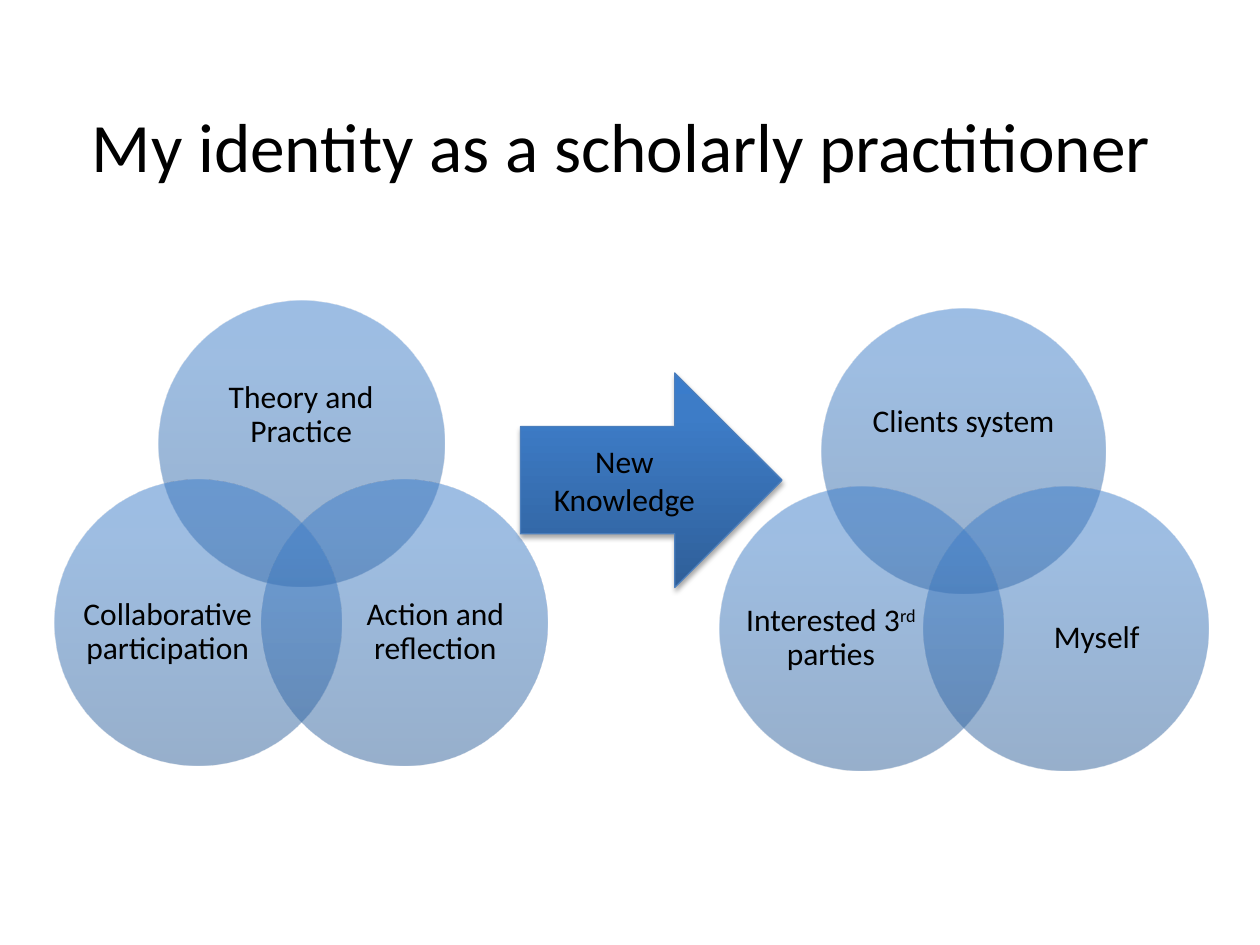
from copy import deepcopy

from pptx import Presentation
from pptx import util as u
from pptx.dml import color
from pptx.enum import shapes, text
from pptx.oxml import ns, xmlchemy

Pt = u.Pt
BLACK = color.RGBColor(0, 0, 0)
DEEP = color.RGBColor(0x2F, 0x5F, 0x99)
MID = color.RGBColor(0x3D, 0x7C, 0xC7)
LIGHT = color.RGBColor(0x3A, 0x7C, 0xCB)
EDGE = color.RGBColor(0x4B, 0x7E, 0xBC)
STOPS = ((0, DEEP), (0.8, MID), (1, LIGHT))
RINGS = (
    ((0.36, 0), (0.133, 0.175, 0.733, 0.45)),
    ((0.72, 0.625), (0.308, 0.26, 0.6, 0.55)),
    ((0, 0.625), (0.093, 0.26, 0.6, 0.55)),
)


def sub(node, tag, **attrs):
    """Append a child element with the given attributes."""
    child = xmlchemy.OxmlElement(tag)
    for key, val in attrs.items():
        child.set(key, str(val))
    node.append(child)
    return child


def write(frame, runs, size=18, font="Calibri", ink=BLACK, lead=None, inset=None):
    """Fill a frame with centred runs; a (text, rise) pair is raised."""
    frame.word_wrap = True
    frame.auto_size = text.MSO_AUTO_SIZE.NONE
    frame.vertical_anchor = text.MSO_ANCHOR.MIDDLE
    if inset is not None:
        frame.margin_left = frame.margin_right = Pt(inset)
        frame.margin_top = frame.margin_bottom = Pt(inset)
    para = frame.paragraphs[0]
    para.alignment = text.PP_ALIGN.CENTER
    if lead:
        para.line_spacing = lead
    for part in [runs] if isinstance(runs, str) else runs:
        words, rise = (part, 0) if isinstance(part, str) else part
        run = para.add_run()
        run.text = words
        run.font.size, run.font.name = Pt(size), font
        run.font.color.rgb = ink
        if rise:
            run.font._element.set("baseline", str(rise * 1000))


class Deck:
    """Hold the style and the current slide."""

    def __init__(self):
        """Open a deck with one title slide."""
        self.prs = Presentation()
        self.prs.slide_width, self.prs.slide_height = Pt(720), Pt(540)
        self.slide = self.prs.slides.add_slide(self.prs.slide_layouts[5])

    def title(self, words, x, y, w, h):
        """Place and fill the title."""
        head = self.slide.shapes.title
        head.left, head.top, head.width, head.height = map(Pt, (x, y, w, h))
        write(head.text_frame, words, size=39.6)

    def shade(self, shape, alpha=None):
        """Give a shape the blue gradient and no outline."""
        shape.shadow.inherit = False
        shape.line.fill.background()
        fill = shape.fill
        fill.gradient()
        fill.gradient_angle = 90
        stops = shape._element.spPr.find(".//" + ns.qn("a:gsLst"))
        stops.append(deepcopy(stops[-1]))
        for stop, (pos, tone) in zip(fill.gradient_stops, STOPS):
            stop.position, stop.color.rgb = pos, tone
        if alpha:
            for node in stops.iter(ns.qn("a:srgbClr")):
                sub(node, "a:alpha", val=alpha * 1000)

    def venn(self, x, y, size, labels):
        """Draw three overlapping circles with labels."""
        group = self.slide.shapes.add_group_shape().shapes
        for ((dx, dy), (bx, by, bw, bh)), label in zip(RINGS, labels):
            left, top = x + dx * size, y + dy * size
            ring = group.add_shape(shapes.MSO_SHAPE.OVAL, Pt(left), Pt(top), Pt(size), Pt(size))
            self.shade(ring, alpha=50)
            box = group.add_textbox(
                Pt(left + bx * size), Pt(top + by * size), Pt(bw * size), Pt(bh * size)
            )
            write(box.text_frame, label, lead=0.9, inset=0)

    def arrow(self, words, x, y, w, h):
        """Draw a block arrow with a soft shadow."""
        arrow = self.slide.shapes.add_shape(
            shapes.MSO_SHAPE.RIGHT_ARROW, Pt(x), Pt(y), Pt(w), Pt(h)
        )
        self.shade(arrow)
        arrow.line.color.rgb, arrow.line.width = EDGE, Pt(0.75)
        cast = sub(
            arrow._element.spPr.find(ns.qn("a:effectLst")), "a:outerShdw",
            blurRad=Pt(3.1), dist=Pt(1.8), dir=5400000, rotWithShape=0,
        )
        sub(sub(cast, "a:srgbClr", val=BLACK), "a:alpha", val=35000)
        write(arrow.text_frame, words)


def main():
    """Build and save the slide."""
    deck = Deck()
    deck.title("My identity as a scholarly practitioner", 31, 37.5, 648, 90)
    deck.venn(31.5, 171.8, 163.6, (
        "Theory and Practice", "Action and reflection", "Collaborative participation",
    ))
    deck.arrow("New Knowledge", 297.4, 213.1, 149.5, 122.6)
    deck.venn(411, 176.6, 162.4, (
        "Clients system", "Myself", ("Interested 3", ("rd", 30), " parties"),
    ))
    deck.prs.save("out.pptx")


if __name__ == "__main__":
    main()
